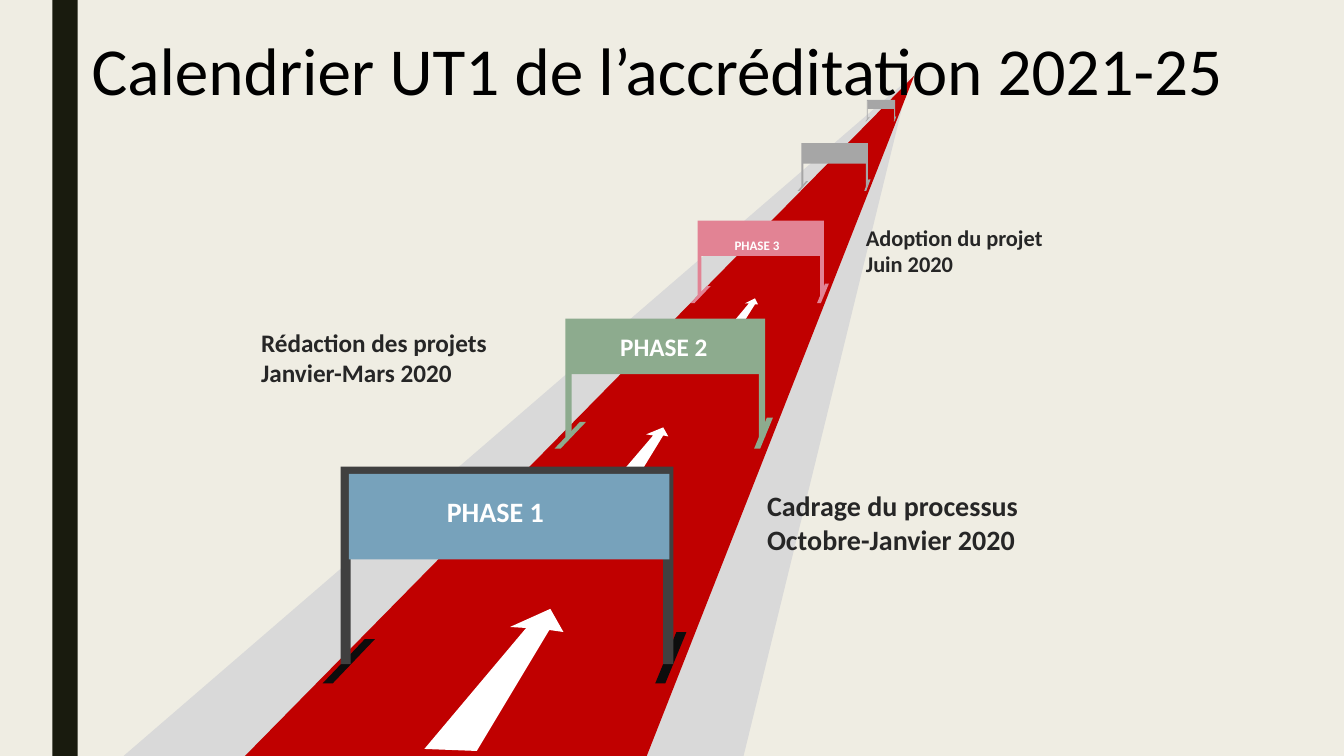
from dataclasses import dataclass

import pptx
import pptx.dml.color
import pptx.enum.shapes
import pptx.enum.text
import pptx.util

Point = tuple[float, float]
Box = tuple[float, float, float, float]
FONT = "Calibri"
WHITE = "FFFFFF"
CENTER = pptx.enum.text.PP_ALIGN.CENTER
LEFT = pptx.enum.text.PP_ALIGN.LEFT


@dataclass
class Sign:
    text: str
    box: Box
    size: int
    fill: str | None = None
    baseline: int = 0


@dataclass
class Hurdle:
    left: float
    top: float
    scale_x: float
    scale_y: float
    panel: str
    frame: str
    feet: str
    sign: Sign | None = None


@dataclass
class Caption:
    lines: list[str]
    box: Box
    size: int


def length(inches: float) -> pptx.util.Cm:
    return pptx.util.Cm(inches * 2.54)


def color(value: str) -> pptx.dml.color.RGBColor:
    return pptx.dml.color.RGBColor.from_string(value)


def paint(shape, fill: str) -> None:
    shape.shadow.inherit = False
    shape.fill.solid()
    shape.fill.fore_color.rgb = color(fill)
    shape.line.fill.background()


def add_outline(shapes, points: list[Point], fill: str) -> None:
    corners = [(length(x), length(y)) for x, y in points]
    builder = shapes.build_freeform(*corners[0])
    builder.add_line_segments(corners[1:], close=True)
    paint(builder.convert_to_shape(), fill)


def add_rectangle(shapes, box: Box, fill: str) -> None:
    kind = pptx.enum.shapes.MSO_SHAPE.RECTANGLE
    paint(shapes.add_shape(kind, *map(length, box)), fill)


def add_text(shapes, lines: list[str], box: Box, size: int, ink: str,
             bold: bool = True, align=LEFT, wrap: bool = False):
    area = shapes.add_textbox(*map(length, box))
    frame = area.text_frame
    frame.word_wrap = wrap
    frame.auto_size = pptx.enum.text.MSO_AUTO_SIZE.SHAPE_TO_FIT_TEXT
    frame.text = "\n".join(lines)
    for paragraph in frame.paragraphs:
        paragraph.alignment = align
        paragraph.font.name = FONT
        paragraph.font.size = pptx.util.Pt(size)
        paragraph.font.bold = bold
        paragraph.font.color.rgb = color(ink)
    return area


def add_sign(shapes, sign: Sign) -> None:
    area = add_text(shapes, [sign.text], sign.box, sign.size, WHITE, align=CENTER)
    if sign.fill:
        paint(area, sign.fill)
    if sign.baseline:
        run = area.text_frame.paragraphs[0].runs[0]
        run.font._element.set("baseline", str(sign.baseline))


# Hurdle outlines at full size, measured from the top left corner of the frame
FEET = [
    [(3.33, 1.64), (3.43, 1.64), (3.22, 2.15), (3.12, 2.15)],
    [(0.24, 1.71), (0.34, 1.71), (-0.08, 2.15), (-0.18, 2.15)],
]
FRAME = [(0, 0), (3.3, 0), (3.3, 1.96), (3.2, 1.96),
         (3.2, 0.1), (0.1, 0.1), (0.1, 1.96), (0, 1.96)]
PANEL = (0.08, 0.07, 3.18, 0.85)


def add_hurdle(shapes, hurdle: Hurdle) -> None:
    def place(points: list[Point]) -> list[Point]:
        return [(hurdle.left + x * hurdle.scale_x, hurdle.top + y * hurdle.scale_y)
                for x, y in points]

    parts = shapes.add_group_shape().shapes
    for foot in FEET:
        add_outline(parts, place(foot), hurdle.feet)
    add_outline(parts, place(FRAME), hurdle.frame)
    x, y, width, height = PANEL
    add_rectangle(parts, (*place([(x, y)])[0], width * hurdle.scale_x,
                          height * hurdle.scale_y), hurdle.panel)
    if hurdle.sign:
        add_sign(parts, hurdle.sign)


BLUE, GREEN, PINK, GREY = "77A2BB", "8DAB8E", "E28394", "A6A6A6"
HURDLES = [
    Hurdle(3.38, 4.63, 1, 1, BLUE, "404040", "0D0D0D",
           Sign("PHASE 1", (4.33, 4.86, 1.17, 0.44), 20)),
    Hurdle(5.61, 3.16, 0.6, 0.6, GREEN, GREEN, GREEN,
           Sign("PHASE 2", (6.04, 3.24, 1.09, 0.4), 18, GREEN)),
    Hurdle(6.92, 2.19, 0.38, 0.38, PINK, PINK, PINK,
           Sign("PHASE 3", (7.15, 2.21, 0.72, 0.28), 16, PINK, -3000)),
    Hurdle(7.95, 1.42, 0.2, 0.22, GREY, GREY, GREY),
    Hurdle(8.6, 0.99, 0.085, 0.1, GREY, GREY, GREY),
]
ARROWS = [
    [(4.21, 7.43), (5.22, 6.23), (5.06, 6.22), (5.46, 6.04),
     (5.59, 6.27), (5.45, 6.25), (4.73, 7.45)],
    [(6.07, 4.8), (6.48, 4.32), (6.41, 4.31), (6.58, 4.24),
     (6.63, 4.33), (6.58, 4.32), (6.28, 4.81)],
    [(7.17, 3.32), (7.43, 3.01), (7.39, 3.01), (7.49, 2.96),
     (7.52, 3.02), (7.49, 3.02), (7.3, 3.32)],
]
CAPTIONS = [
    Caption(["Adoption du projet", "Juin 2020"], (8.59, 2.17, 3.3, 0.64), 16),
    Caption(["Cadrage du processus", "Octobre-Janvier 2020"], (7.61, 4.8, 3.3, 0.77), 20),
    Caption(["Rédaction des projets", "Janvier-Mars 2020"], (2.59, 3.2, 3.3, 0.71), 18),
]


def main() -> None:
    deck = pptx.Presentation()
    deck.slide_width, deck.slide_height = length(13.333), length(7.5)
    slide = deck.slides.add_slide(deck.slide_layouts[6])
    shapes = slide.shapes

    # Background and side band
    slide.background.fill.solid()
    slide.background.fill.fore_color.rgb = color("EFEDE3")
    add_rectangle(shapes, (0.52, 0, 0.25, 7.5), "191B0E")

    # Road with its verge and arrows
    road = shapes.add_group_shape().shapes
    add_outline(road, [(1.18, 7.54), (9.02, 0.78), (7.37, 7.53)], "D9D9D9")
    add_outline(road, [(9.07, 0.75), (6.4, 7.54), (2.39, 7.54)], "C00000")
    for arrow in ARROWS:
        add_outline(shapes, arrow, WHITE)

    # Phases along the road
    for hurdle in HURDLES:
        add_hurdle(shapes, hurdle)
    for caption in CAPTIONS:
        area = add_text(shapes, caption.lines, caption.box, caption.size,
                        "262626", wrap=True)
        area.text_frame.margin_left = area.text_frame.margin_right = 0

    # Title
    add_text(shapes, ["Calendrier UT1 de l’accréditation 2021-25"],
             (0.81, 0.23, 11.56, 0.91), 48, "000000", bold=False)

    deck.save("out.pptx")


if __name__ == "__main__":
    main()
